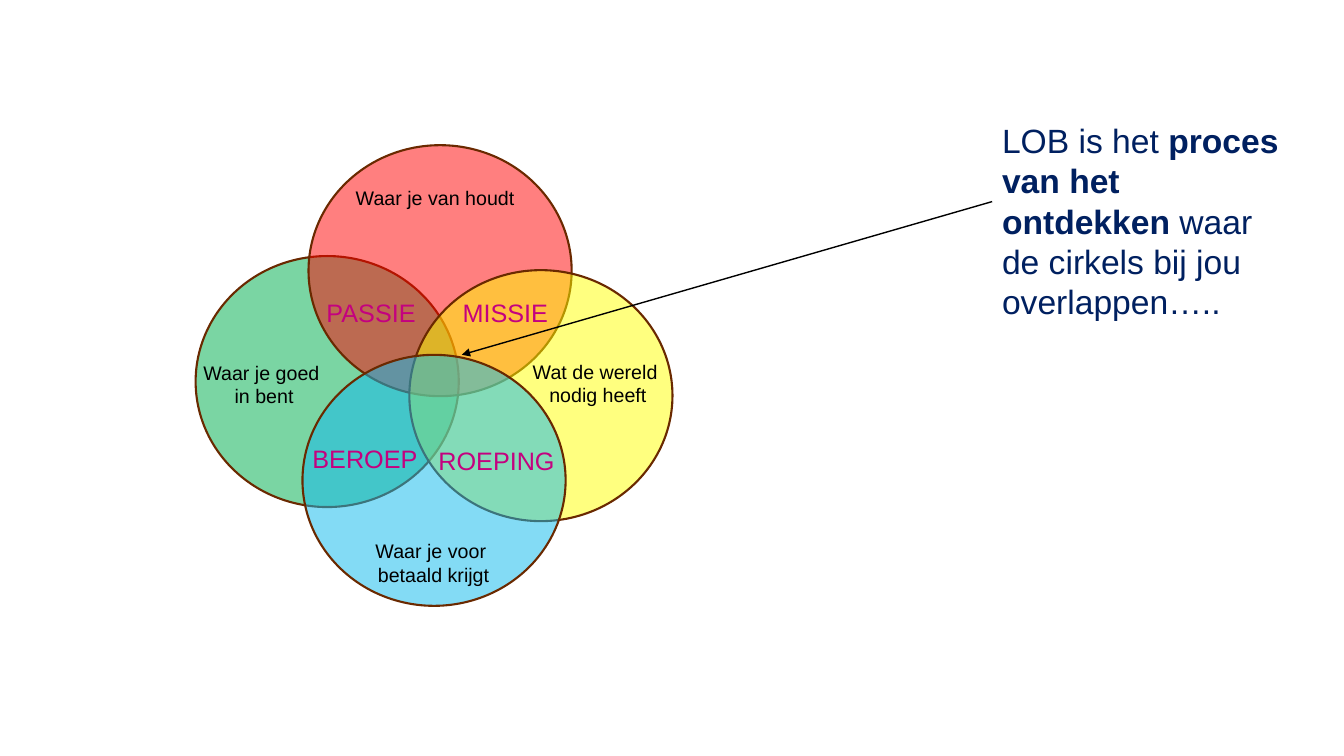
from dataclasses import dataclass

from lxml import etree
from pptx import Presentation
from pptx import util as u
from pptx.dml import color
from pptx.enum import shapes, text
from pptx.oxml import ns

PX = 9144  # EMU per px, 100 px to the inch
FONT = "Arial"
BROWN, BLACK, PINK, NAVY = "6A2900", "000000", "C4017F", "002060"
LEFT, MID = text.PP_ALIGN.LEFT, text.PP_ALIGN.CENTER


@dataclass
class Run:
    words: str
    bold: bool = False


@dataclass
class Circle:
    x: int
    y: int
    fill: str
    alpha: int


@dataclass
class Label:
    x: int
    y: int
    w: int
    h: int
    size: int
    ink: str
    lines: list[list[Run]]
    align: text.PP_ALIGN = LEFT


def px(n: int) -> u.Emu:
    return u.Emu(n * PX)


def rgb(code: str) -> color.RGBColor:
    return color.RGBColor.from_string(code)


def topic(x: int, y: int, *lines: str, align: text.PP_ALIGN = MID) -> Label:
    high = 34 if len(lines) == 1 else 57
    return Label(x, y, 232, high, 14, BLACK, [[Run(s)] for s in lines], align)


def theme(x: int, y: int, w: int, word: str) -> Label:
    return Label(x, y, w, 40, 18, PINK, [[Run(word)]])


def draw_circle(slide, c: Circle) -> None:
    disc = slide.shapes.add_shape(
        shapes.MSO_SHAPE.FLOWCHART_CONNECTOR, px(c.x), px(c.y), px(261), px(249))
    disc.shadow.inherit = False
    disc.fill.solid()
    disc.fill.fore_color.rgb = rgb(c.fill)
    tone = disc._element.spPr.find(ns.qn("a:solidFill"))[0]
    etree.SubElement(tone, ns.qn("a:alpha"), val=str(c.alpha * 1000))
    disc.line.color.rgb = rgb(BROWN)
    disc.line.width = u.Pt(1.5)


def draw_label(slide, b: Label) -> None:
    box = slide.shapes.add_textbox(px(b.x), px(b.y), px(b.w), px(b.h))
    frame = box.text_frame
    frame.word_wrap = True
    frame.auto_size = text.MSO_AUTO_SIZE.SHAPE_TO_FIT_TEXT
    for i, line in enumerate(b.lines):
        para = frame.add_paragraph() if i else frame.paragraphs[0]
        para.alignment = b.align
        for part in line:
            run = para.add_run()
            run.text = part.words
            run.font.name = FONT
            run.font.size = u.Pt(b.size)
            run.font.bold = part.bold
            run.font.color.rgb = rgb(b.ink)


def draw_arrow(slide, x1: int, y1: int, x2: int, y2: int) -> None:
    link = slide.shapes.add_connector(
        shapes.MSO_CONNECTOR.STRAIGHT, px(x1), px(y1), px(x2), px(y2))
    link.line.color.rgb = rgb(BLACK)
    link.line.width = u.Pt(1)
    etree.SubElement(link.line._get_or_add_ln(), ns.qn("a:tailEnd"), type="triangle")
    etree.SubElement(link._element.spPr, ns.qn("a:effectLst"))


# Overlapping circles, back to front
CIRCLES = [
    Circle(194, 254, "00B050", 52),
    Circle(306, 144, "FF0000", 50),
    Circle(406, 268, "FFFF00", 50),
    Circle(300, 352, "12BAED", 52),
]

# Circle topics, overlap themes and the explanation
LABELS = [
    topic(343, 180, "Waar je van houdt", align=LEFT),
    topic(146, 353, "Waar je goed ", "in bent"),
    topic(477, 352, "Wat de wereld ", "nodig heeft"),
    topic(314, 530, "Waar je voor ", "betaald krijgt"),
    theme(449, 290, 120, "MISSIE"),
    theme(425, 437, 139, "ROEPING"),
    theme(314, 290, 124, "PASSIE"),
    theme(300, 435, 149, "BEROEP"),
    Label(984, 114, 311, 172, 24, NAVY, [[
        Run("LOB is het "),
        Run("proces van het ontdekken ", True),
        Run("waar de cirkels bij jou overlappen…..")]]),
]


def main() -> None:
    deck = Presentation()
    deck.slide_width, deck.slide_height = px(1333), px(750)
    slide = deck.slides.add_slide(deck.slide_layouts[6])
    for c in CIRCLES:
        draw_circle(slide, c)
    for b in LABELS:
        draw_label(slide, b)
    # Arrow from the explanation to the centre
    draw_arrow(slide, 984, 200, 458, 352)
    deck.save("out.pptx")


if __name__ == "__main__":
    main()
